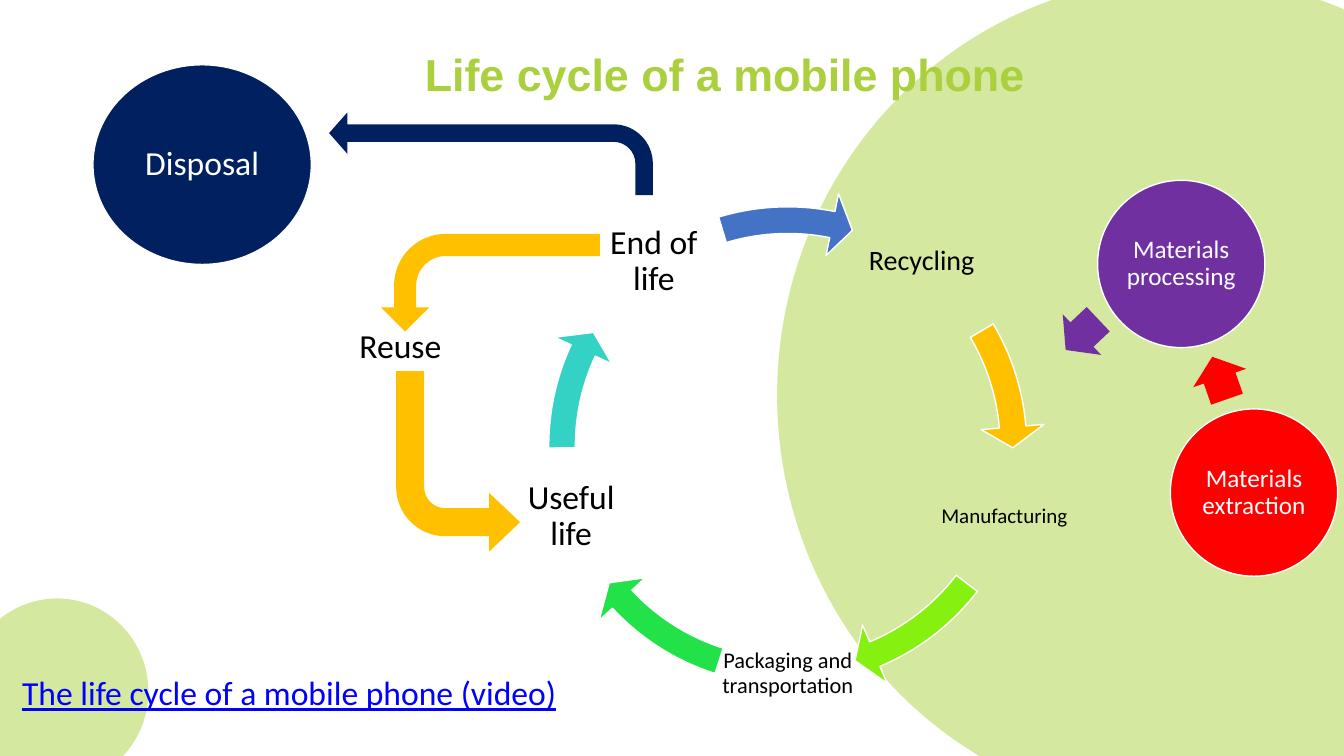
import math

from lxml import etree
from pptx import Presentation
from pptx.enum import shapes, text
from pptx.dml.color import RGBColor
from pptx.oxml.ns import qn
from pptx.util import Pt

COLORS = {
    "pale": "D5E8A0", "title": "AAD03D", "black": "000000", "white": "FFFFFF",
    "amber": "FFC000", "lime": "86F011", "green": "23E148", "teal": "33D2C5",
    "blue": "4472C4", "purple": "7030A0", "red": "FF0000", "navy": "002060",
    "link": "0000FF",
}
ELLIPSE = shapes.MSO_SHAPE.OVAL
ARROW = shapes.MSO_SHAPE.RIGHT_ARROW


def rgb(name):
    return RGBColor.from_string(COLORS[name])


def apply(target, values):
    for name, value in values.items():
        setattr(target, name, value)


def paint(sp, fill, line=None):
    sp.shadow.inherit = False
    sp.fill.solid()
    sp.fill.fore_color.rgb = rgb(fill)
    if line:
        sp.line.color.rgb = rgb(line)
        sp.line.width = Pt(1)
    else:
        sp.line.fill.background()
    return sp


def write(sp, words, size, color="black", inset=2, frame=None, para=None, font=None):
    tf = sp.text_frame
    margins = {f"margin_{side}": Pt(inset) for side in ("left", "right", "top", "bottom")}
    apply(tf, {"word_wrap": True, "auto_size": text.MSO_AUTO_SIZE.NONE,
               "vertical_anchor": text.MSO_ANCHOR.MIDDLE, **margins, **(frame or {})})
    p = tf.paragraphs[0]
    apply(p, {"alignment": text.PP_ALIGN.CENTER, "line_spacing": 0.9, **(para or {})})
    r = p.add_run()
    r.text = words
    apply(r.font, {"name": "Calibri", "size": Pt(size), **(font or {})})
    r.font.color.rgb = rgb(color)


def label(s, box, words, size, **options):
    write(s.shapes.add_textbox(*map(Pt, box)), words, size, **options)


def preset(s, kind, box, fill, line=None):
    return paint(s.shapes.add_shape(kind, *map(Pt, box)), fill, line)


def outline(s, points, curves, fill, line=None):
    """Closed shape; curves lists the index of each curve's first control point."""
    points = [(Pt(x), Pt(y)) for x, y in points]
    builder = s.shapes.build_freeform(*points[0])
    builder.add_line_segments(points[1:], close=True)
    sp = builder.convert_to_shape()
    segments = list(sp._element.iter(qn("a:lnTo")))
    for first in curves:
        curve = etree.Element(qn("a:cubicBezTo"))
        segments[first - 1].addprevious(curve)
        for segment in segments[first - 1:first + 2]:
            curve.append(segment[0])
            segment.getparent().remove(segment)
    paint(sp, fill, line)


def arc_arrow(s, cx, cy, radius, start, neck, fill):
    """Arrow along a circle; angles in degrees, clockwise from the right."""
    def at(offset, angle, stretch=1):
        a = math.radians(angle)
        r = (radius + offset) * stretch
        return cx + r * math.cos(a), cy + r * math.sin(a)

    reach = 4 / 3 * math.tan(math.radians(neck - start) / 4)
    turn, stretch = math.degrees(math.atan(reach)), math.hypot(1, reach)

    def arc(offset):
        return [at(offset, start), at(offset, start + turn, stretch),
                at(offset, neck - turn, stretch), at(offset, neck)]

    points = [*arc(8), at(21, neck), at(-2, neck + 5.3), at(-24, neck),
              *reversed(arc(-11))]
    outline(s, points, (1, 8), fill, "white")


def bent_arrow(s, tail, corner, tip, width, head, length, radius, fill):
    """Arrow with one rounded right-angle bend along its centre line."""
    def unit(a, b):
        d = math.dist(a, b)
        return (b[0] - a[0]) / d, (b[1] - a[1]) / d

    u, v = unit(tail, corner), unit(corner, tip)

    def move(point, along_u, along_v):
        return tuple(c + along_u * a + along_v * b for c, a, b in zip(point, u, v))

    half = width / 2
    centre = move(corner, half - radius, radius - half)

    def bend(r):
        k = 0.55 * r
        return [move(centre, *d) for d in ((0, -r), (k, -r), (r, -k), (r, 0))]

    points = [move(tail, 0, -half), *bend(radius), move(tip, half, -length),
              move(tip, head / 2, -length), tip, move(tip, -head / 2, -length),
              move(tip, -half, -length), *reversed(bend(radius - width)),
              move(tail, 0, half)]
    outline(s, points, (2, 11), fill)


def background(s, box):
    x, y, w, h = box
    preset(s, ELLIPSE, (x + 555.1, y - 16.5, 584, 597.5), "pale")
    preset(s, ELLIPSE, (x - 24.5, y + h - 112.5, 130.5, 133), "pale")


def heading(s, box):
    sp = s.shapes.title
    apply(sp, dict(zip(("left", "top", "width", "height"), map(Pt, box))))
    write(sp, "Life cycle of a mobile phone", 32, "title", 3.6,
          frame={"vertical_anchor": text.MSO_ANCHOR.TOP},
          para={"line_spacing": 1.5}, font={"name": "Arial", "bold": True})
    # Bring the title in front of the background circles
    s.shapes._spTree.append(sp._element)


def cycle(s, box):
    x, y, w, h = box
    cx, cy, radius = x + w / 2, y + h / 2, w / 2
    # Stages sit on a pentagon; each arrow leads on to the next stage
    stages = [
        ("Recycling", 20, 27, "amber"),
        ("Manufacturing", 15, 35, "lime"),
        ("Packaging and transportation", 16, 73, "green"),
        ("Useful life", 24, 58, "teal"),
        ("End of life", 24, 58, "blue"),
    ]
    spans = [(-30.7, -4.8), (37.5, 67.3), (107.7, 137.2), (179.5, 205), (253.2, 281.4)]
    for i, ((words, size, tall, fill), span) in enumerate(zip(stages, spans)):
        a = math.radians(72 * i - 54)
        mid_x, mid_y = cx + radius * math.cos(a), cy + radius * math.sin(a)
        label(s, (mid_x - 49, mid_y - tall / 2, 98, tall), words, size)
        arc_arrow(s, cx, cy, radius, *span, fill)


def materials(s, box):
    x, y, w, h = box
    # Circle offset, arrow centre offset and arrow rotation
    for words, fill, dx, dy, ax, ay, turn in (
        ("Materials processing", "purple", 27, 0, 15.8, 110.2, 136.6),
        ("Materials extraction", "red", w - 119.5, h - 119.5, 114.2, 141.2, 250.8),
    ):
        sp = preset(s, ELLIPSE, (x + dx, y + dy, 119.5, 119.5), fill, "white")
        write(sp, words, 18, "white", 1)
        arrow = preset(s, ARROW, (x + ax - 16, y + ay - 20, 32, 40), fill)
        arrow.rotation = turn
        arrow.adjustments[0], arrow.adjustments[1] = 0.6, 0.5


def reuse(s, box):
    x, y, w, h = box
    label(s, (x, y + 65.5, 98, 31), "Reuse", 24)
    bent_arrow(s, (x + w, y + 8), (x + 52.4, y + 8), (x + 52.4, y + 69.8),
               15.8, 34.6, 17.3, 36.7, "amber")
    bent_arrow(s, (x + 56, y + 98), (x + 56, y + h - 21), (x + 134.5, y + h - 21),
               20, 41.8, 22, 35, "amber")


def disposal(s, box):
    x, y, w, h = box
    sp = preset(s, ELLIPSE, (x, y, 156, h), "navy", "white")
    write(sp, "Disposal", 24, "white")
    bent_arrow(s, (x + w - 6.3, y + 93), (x + w - 6.3, y + 48.8), (x + 168.7, y + 48.8),
               12.5, 29.5, 13, 28, "navy")


def video_line(s, box):
    label(s, box, "The life cycle of a mobile phone (video)", 24, color="link", inset=3.6,
          frame={"word_wrap": False, "vertical_anchor": text.MSO_ANCHOR.TOP},
          para={"alignment": text.PP_ALIGN.LEFT, "line_spacing": 1.0},
          font={"underline": True})


def main():
    prs = Presentation()
    apply(prs, {"slide_width": Pt(960), "slide_height": Pt(540)})
    s = prs.slides.add_slide(prs.slide_layouts[5])
    background(s, (0, 0, 960, 540))
    heading(s, (109.5, 10.8, 817, 58.5))
    cycle(s, (400, 155.8, 325.4, 325.4))
    materials(s, (757, 128.8, 198.5, 282.8))
    disposal(s, (66.4, 46.3, 400, 142.6))
    reuse(s, (237, 167, 191.5, 227))
    video_line(s, (12.2, 476.6, 439, 35.3))
    prs.save("out.pptx")


if __name__ == "__main__":
    main()
